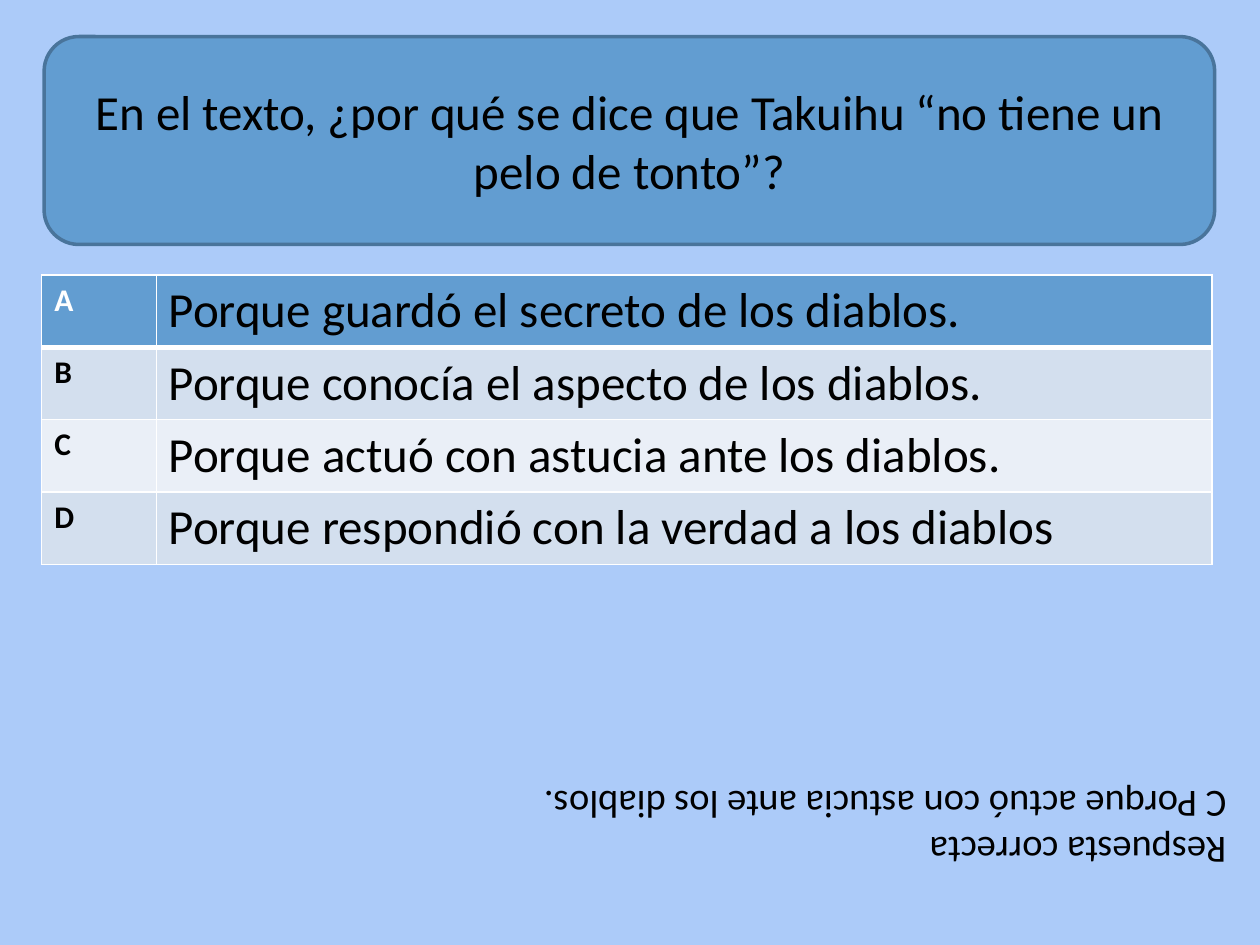
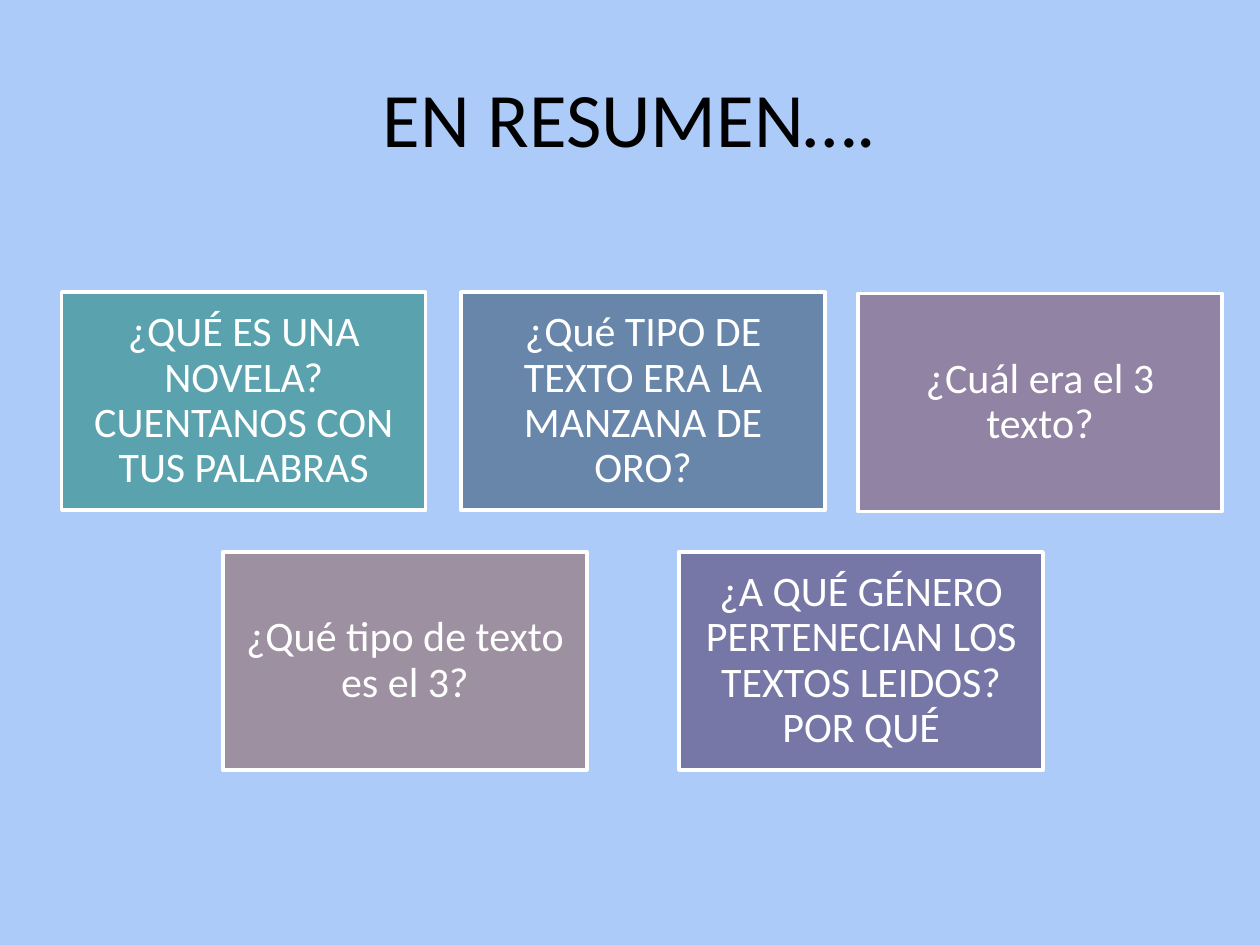
from lxml.etree import SubElement
from pptx import Presentation
from pptx.dml.color import RGBColor
from pptx.enum.shapes import MSO_SHAPE
from pptx.enum.text import MSO_ANCHOR, PP_ALIGN
from pptx.oxml.ns import qn
from pptx.util import Pt

SKY = RGBColor(0xAC, 0xCB, 0xF9)
BLUE = RGBColor(0x62, 0x9D, 0xD1)
DARK_BLUE = RGBColor(0x49, 0x74, 0x9B)
PALE_BLUE = RGBColor(0xD3, 0xDF, 0xEE)
PALE_GREY = RGBColor(0xEA, 0xEF, 0xF7)
TEAL = RGBColor(0x5A, 0xA2, 0xAE)
STEEL = RGBColor(0x68, 0x85, 0xAA)
MAUVE = RGBColor(0x90, 0x83, 0xA3)
ROSE_GREY = RGBColor(0x9D, 0x90, 0xA0)
INDIGO = RGBColor(0x76, 0x77, 0xA6)
BLACK = RGBColor(0, 0, 0)
WHITE = RGBColor(0xFF, 0xFF, 0xFF)

FONT = "Calibri"
CARD_SIZE = (208, 124.6)

ANSWERS = [
    ("A", "Porque guardó el secreto de los diablos."),
    ("B", "Porque conocía el aspecto de los diablos."),
    ("C", "Porque actuó con astucia ante los diablos."),
    ("D", "Porque respondió con la verdad a los diablos"),
]
SUMMARY_QUESTIONS = [
    (35.3, 167, TEAL, "¿QUÉ ES UNA NOVELA? CUENTANOS CON TUS PALABRAS"),
    (263.5, 167, STEEL, "¿Qué TIPO DE TEXTO ERA LA MANZANA DE ORO?"),
    (490.3, 167.8, MAUVE, "¿Cuál era el 3 texto?"),
    (127.4, 315.4, ROSE_GREY, "¿Qué tipo de texto es el 3?"),
    (388.1, 315.4, INDIGO, "¿A QUÉ GÉNERO PERTENECIAN LOS TEXTOS LEIDOS? POR QUÉ"),
]


class Deck:
    """Builds the reading quiz slides in one shared style."""

    def __init__(self):
        self.presentation = Presentation()
        self.presentation.slide_width = Pt(720)
        self.presentation.slide_height = Pt(540)
        self.slide = None

    def add_slide(self):
        self.slide = self.presentation.slides.add_slide(self.presentation.slide_layouts[6])
        background = self.slide.background.fill
        background.solid()
        background.fore_color.rgb = SKY

    def style_text(self, frame, text, size, color, align=PP_ALIGN.LEFT, bold=False):
        frame.text = text
        frame.word_wrap = True
        for paragraph in frame.paragraphs:
            paragraph.alignment = align
            for run in paragraph.runs:
                run.font.name = FONT
                run.font.size = Pt(size)
                run.font.bold = bold
                run.font.color.rgb = color

    def text(self, left, top, width, height, text, size, align=PP_ALIGN.LEFT, rotation=0):
        box = self.slide.shapes.add_textbox(Pt(left), Pt(top), Pt(width), Pt(height))
        box.rotation = rotation
        self.style_text(box.text_frame, text, size, BLACK, align)
        box.text_frame.vertical_anchor = MSO_ANCHOR.MIDDLE

    def panel(self, kind, left, top, width, height, fill, line, text, size, color):
        panel = self.slide.shapes.add_shape(kind, Pt(left), Pt(top), Pt(width), Pt(height))
        panel.shadow.inherit = False
        panel.fill.solid()
        panel.fill.fore_color.rgb = fill
        panel.line.color.rgb = line
        panel.line.width = Pt(2)
        self.style_text(panel.text_frame, text, size, color, PP_ALIGN.CENTER)
        panel.text_frame.vertical_anchor = MSO_ANCHOR.MIDDLE
        return panel

    def question(self, text):
        self.panel(MSO_SHAPE.ROUNDED_RECTANGLE, 25.2, 20.9, 668.9, 118.8,
                   BLUE, DARK_BLUE, text, 28, BLACK)

    def card(self, left, top, fill, text):
        frame = self.panel(MSO_SHAPE.RECTANGLE, left, top, *CARD_SIZE,
                           fill, WHITE, text, 24, WHITE).text_frame
        frame.margin_left = frame.margin_right = Pt(7.2)
        frame.margin_top = frame.margin_bottom = Pt(7.2)
        frame.paragraphs[0].line_spacing = 0.9

    def border(self, cell, side, width):
        properties = cell._tc.get_or_add_tcPr()
        line = SubElement(properties, qn(f"a:ln{side}"), w=str(Pt(width)))
        SubElement(SubElement(line, qn("a:solidFill")), qn("a:srgbClr"), val=str(WHITE))

    def answers(self, left, top, widths, row_height, rows):
        table = self.slide.shapes.add_table(
            len(rows), len(widths), Pt(left), Pt(top),
            Pt(sum(widths)), Pt(row_height * len(rows))).table
        for column, width in zip(table.columns, widths):
            column.width = Pt(width)
        for index, (letter, answer) in enumerate(rows):
            table.rows[index].height = Pt(row_height)
            fill = BLUE if index == 0 else (PALE_GREY, PALE_BLUE)[index % 2]
            letter_cell, answer_cell = table.cell(index, 0), table.cell(index, 1)
            self.style_text(letter_cell.text_frame, letter, 18,
                            WHITE if index == 0 else BLACK, bold=True)
            self.style_text(answer_cell.text_frame, answer, 28, BLACK)
            for cell in (letter_cell, answer_cell):
                self.border(cell, "L", 1)
                self.border(cell, "R", 1)
                self.border(cell, "T", 3 if index == 1 else 1)
                self.border(cell, "B", 3 if index == 0 else 1)
                cell.fill.solid()
                cell.fill.fore_color.rgb = fill


def main():
    deck = Deck()

    deck.add_slide()
    deck.text(241.2, 429.1, 466.6, 90,
              "Respuesta correcta\vC Porque actuó con astucia ante los diablos.",
              22, rotation=180)
    deck.question("En el texto, ¿por qué se dice que Takuihu “no tiene un pelo de tonto”?")
    deck.answers(23.8, 157, (65.5, 603.4), 41.4, ANSWERS)

    deck.add_slide()
    deck.text(36, 21.6, 648, 90, "EN RESUMEN….", 44, PP_ALIGN.CENTER)
    for left, top, fill, question in SUMMARY_QUESTIONS:
        deck.card(left, top, fill, question)

    deck.presentation.save("out.pptx")


if __name__ == "__main__":
    main()
